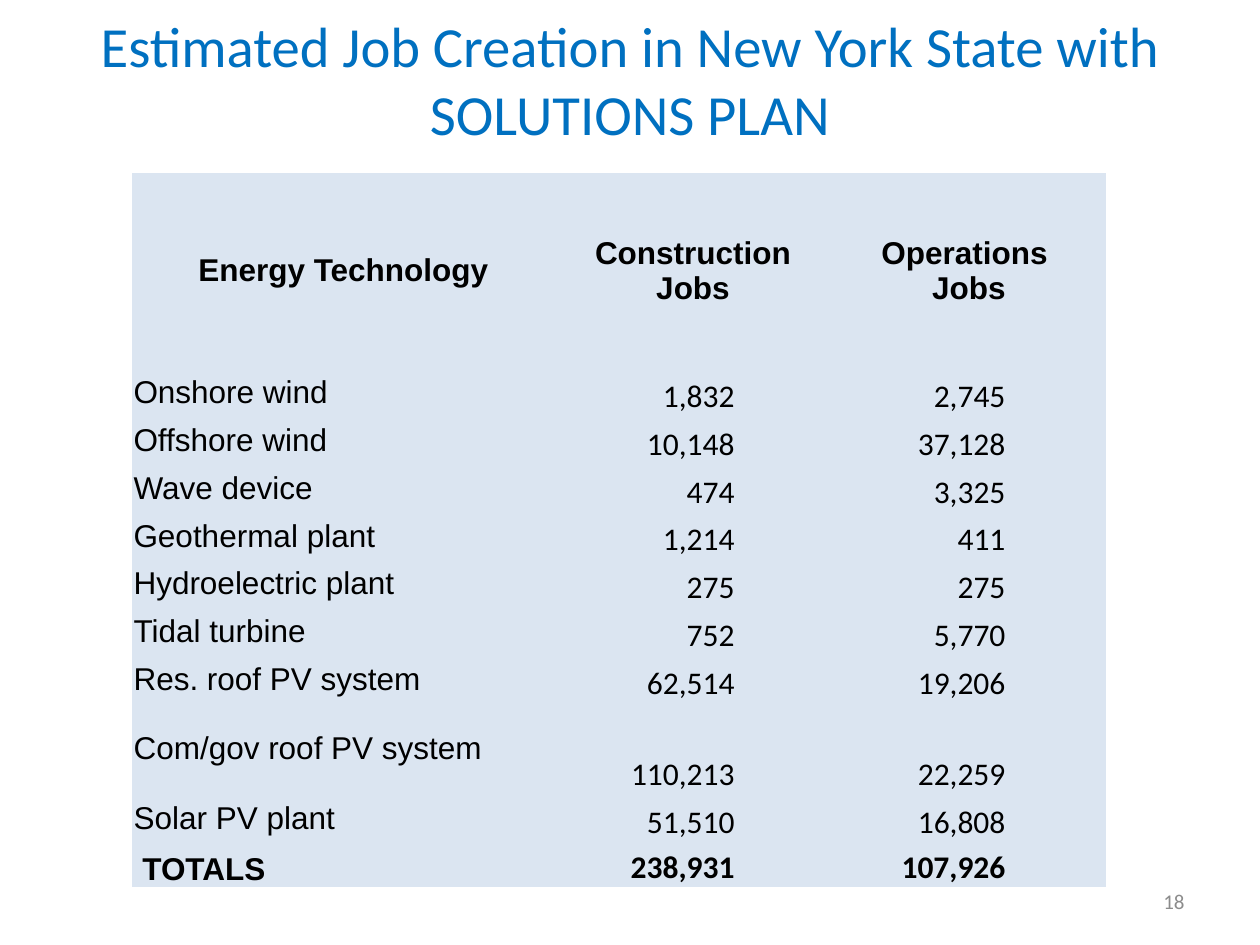
import pptx
import pptx.dml.color
import pptx.enum.text
import pptx.oxml.ns
import pptx.util

Inches = pptx.util.Inches
Align = pptx.enum.text.PP_ALIGN
Anchor = pptx.enum.text.MSO_ANCHOR

TITLE = "Estimated Job Creation in New York State with SOLUTIONS PLAN"
PAGE = "18"
HEADS = [["Energy Technology"], ["Construction Jobs"], ["Operations ", "Jobs"]]
JOBS = [
    ("Onshore wind", "1,832", "2,745"),
    ("Offshore wind", "10,148", "37,128"),
    ("Wave device", "474", "3,325"),
    ("Geothermal plant", "1,214", "411"),
    ("Hydroelectric plant", "275", "275"),
    ("Tidal turbine", "752", "5,770"),
    ("Res. roof PV system", "62,514", "19,206"),
    ("Com/gov roof PV system", "110,213", "22,259"),
    ("Solar PV plant", "51,510", "16,808"),
]
TOTALS = ("TOTALS", "238,931", "107,926")

THEME = {
    "title": ("Calibri", 32.4, "0070C0"),
    "page": ("Calibri", 12, "8C8C8C"),
    "label": ("Arial", 18, "000000"),
    "value": ("Calibri", 18, "000000"),
    "fill": "DBE5F1",
    "plain": "{2D5ABB26-0587-4C30-8999-92F81FD0307C}",
}
COLS = [3.35, 2.2, 2.18]
ROWS = [1.55] + [0.38] * 7 + [0.72, 0.38, 0.36]
INSET = 0.01
RIGHT = [INSET, 0.77, 0.8]
INDENT = 0.08


def color(code):
    return pptx.dml.color.RGBColor.from_string(code)


def write(frame, lines, style, align, bold=False):
    font, size, ink = THEME[style]
    for i, line in enumerate(lines):
        para = frame.paragraphs[0] if i == 0 else frame.add_paragraph()
        para.alignment = align
        run = para.add_run()
        run.text = line
        run.font.name = font
        run.font.size = pptx.util.Pt(size)
        run.font.bold = bold
        run.font.color.rgb = color(ink)


def label(slide, area, text, style, align):
    frame = slide.shapes.add_textbox(*map(Inches, area)).text_frame
    frame.word_wrap = True
    frame.vertical_anchor = Anchor.MIDDLE
    write(frame, [text], style, align)


def fill(cell, lines, style, align, anchor, bold, left, right):
    cell.fill.solid()
    cell.fill.fore_color.rgb = color(THEME["fill"])
    cell.margin_left, cell.margin_right = Inches(left), Inches(right)
    cell.margin_top, cell.margin_bottom = Inches(INSET), 0
    cell.vertical_anchor = anchor
    write(cell.text_frame, lines, style, align, bold)


def grid(slide):
    area = (1.05, 1.37, sum(COLS), sum(ROWS))
    frame = slide.shapes.add_table(len(ROWS), len(COLS), *map(Inches, area))
    table = frame.table
    table.first_row = table.horz_banding = False
    tag = pptx.oxml.ns.qn("a:tableStyleId")
    next(table._tbl.iter(tag)).text = THEME["plain"]
    for col, width in zip(table.columns, COLS):
        col.width = Inches(width)
    for row, height in zip(table.rows, ROWS):
        row.height = Inches(height)
    for c, lines in enumerate(HEADS):
        fill(table.cell(0, c), lines, "label", Align.CENTER,
             Anchor.MIDDLE, True, INSET, INSET)
    for r, row in enumerate(JOBS + [TOTALS], 1):
        total = row is TOTALS
        for c, text in enumerate(row):
            name = c == 0
            fill(table.cell(r, c), [text],
                 "label" if name else "value",
                 Align.LEFT if name else Align.RIGHT,
                 Anchor.MIDDLE if name and not total else Anchor.BOTTOM,
                 total, INDENT if name and total else INSET, RIGHT[c])


def main():
    deck = pptx.Presentation()
    deck.slide_width, deck.slide_height = Inches(10), Inches(7.5)
    slide = deck.slides.add_slide(deck.slide_layouts[6])
    label(slide, (0.5, 0, 9, 1.25), TITLE, "title", Align.CENTER)
    label(slide, (7.17, 6.95, 2.33, 0.4), PAGE, "page", Align.RIGHT)
    grid(slide)
    deck.save("out.pptx")


if __name__ == "__main__":
    main()
